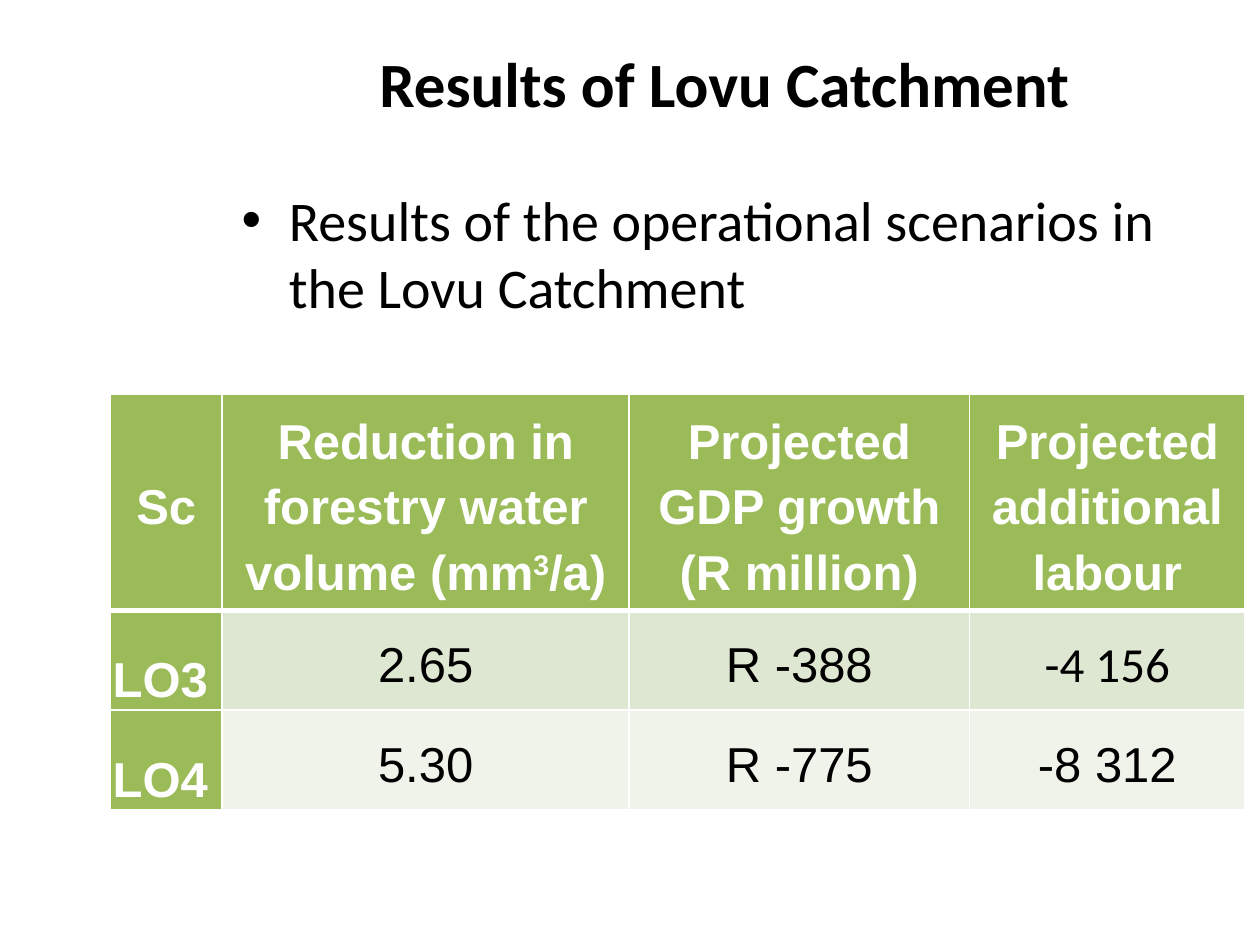
import pptx
import pptx.util
import pptx.dml.color
import pptx.enum.text
import pptx.oxml
import pptx.oxml.ns

Pt = pptx.util.Pt
ALIGN = pptx.enum.text.PP_ALIGN
ANCHOR = pptx.enum.text.MSO_ANCHOR

COLORS = {"white": "FFFFFF", "black": "000000", "green": "9BBB59",
          "band_dark": "DEE7D1", "band_light": "EFF3EA"}

TITLE = "Results of Lovu Catchment"
BULLET = "Results of the operational scenarios in the Lovu Catchment"
ROWS = [
    ["Sc", ("Reduction in forestry water volume (mm", "3", "/a)"),
     "Projected GDP growth (R million)", "Projected additional labour"],
    ["LO3", "2.65", "R -388", "-4 156"],
    ["LO4", "5.30", "R -775", "-8 312"],
]
CALIBRI_CELL = (1, 3)
COLUMN_WIDTHS = [64, 232.5, 194.5, 157.5]
ROW_HEIGHTS = [108, 57, 57]
BAND_FILLS = ["green", "band_dark", "band_light"]
INDENT = 27


def color(name):
    return pptx.dml.color.RGBColor.from_string(COLORS[name])


def style(font, size, face, color_name, bold=False):
    font.size = Pt(size)
    font.name = face
    font.bold = bold
    font.color.rgb = color(color_name)


def add_text(slide, bounds, text):
    box = slide.shapes.add_textbox(*[Pt(length) for length in bounds])
    box.text_frame.word_wrap = True
    box.text_frame.text = text
    return box.text_frame.paragraphs[0]


def add_bullet(para):
    properties = para._p.get_or_add_pPr()
    properties.set("marL", str(Pt(INDENT)))
    properties.set("indent", str(-Pt(INDENT)))
    namespace = pptx.oxml.ns.nsdecls("a")
    properties.append(pptx.oxml.parse_xml(f'<a:buFont {namespace} typeface="Arial"/>'))
    properties.append(pptx.oxml.parse_xml(f'<a:buChar {namespace} char="•"/>'))


def add_borders(cell, top, bottom):
    for side, width in (("L", 1), ("R", 1), ("T", top), ("B", bottom)):
        cell._tc.get_or_add_tcPr().append(pptx.oxml.parse_xml(
            f'<a:ln{side} {pptx.oxml.ns.nsdecls("a")} w="{Pt(width)}"><a:solidFill>'
            f'<a:srgbClr val="{COLORS["white"]}"/></a:solidFill></a:ln{side}>'))


def fill_cell(cell, row, column, content):
    labelled = row == 0 or column == 0
    side_label = row > 0 and column == 0
    cell.margin_left = cell.margin_right = cell.margin_top = cell.margin_bottom = Pt(1.4)
    cell.vertical_anchor = ANCHOR.BOTTOM if side_label else ANCHOR.MIDDLE
    add_borders(cell, 3 if row == 1 else 1, 3 if row == 0 else 1)
    cell.fill.solid()
    cell.fill.fore_color.rgb = color("green" if labelled else BAND_FILLS[row])
    para = cell.text_frame.paragraphs[0]
    para.alignment = ALIGN.JUSTIFY if side_label else ALIGN.CENTER
    para.line_spacing = 1.2
    parts = (content,) if isinstance(content, str) else content
    for index, part in enumerate(parts):
        span = para.add_run()
        span.text = part
        face = "Calibri" if (row, column) == CALIBRI_CELL else "Arial"
        style(span.font, 28, face, "white" if labelled else "black", labelled)
        if index == 1:
            span.font._element.set("baseline", "30000")


def main():
    deck = pptx.Presentation()
    deck.slide_width, deck.slide_height = Pt(720), Pt(540)
    page = deck.slides.add_slide(deck.slide_layouts[6])

    title = add_text(page, (116.5, 21.6, 595, 90), TITLE)
    title.alignment = ALIGN.CENTER
    style(title.runs[0].font, 36, "Calibri", "black", True)

    bullet = add_text(page, (131, 102.2, 553, 84), BULLET)
    add_bullet(bullet)
    style(bullet.runs[0].font, 32, "Calibri", "black")

    frame = page.shapes.add_table(len(ROWS), len(COLUMN_WIDTHS), Pt(63), Pt(225),
                                  Pt(sum(COLUMN_WIDTHS)), Pt(sum(ROW_HEIGHTS)))
    table = frame.table
    for column, width in zip(table.columns, COLUMN_WIDTHS):
        column.width = Pt(width)
    for row, height in zip(table.rows, ROW_HEIGHTS):
        row.height = Pt(height)
    for row, contents in enumerate(ROWS):
        for column, content in enumerate(contents):
            fill_cell(table.cell(row, column), row, column, content)

    deck.save("out.pptx")


if __name__ == "__main__":
    main()
